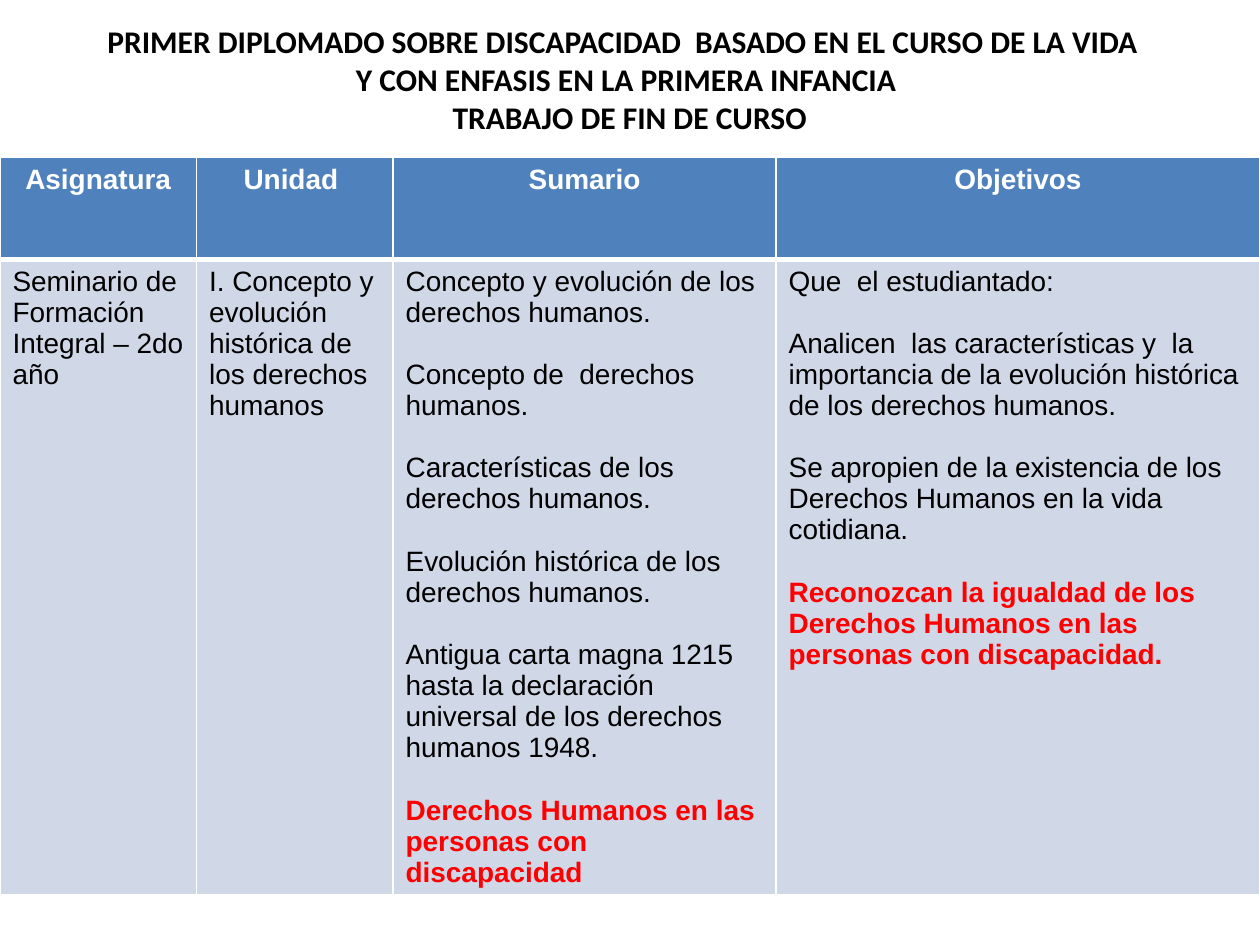
from lxml.etree import SubElement
from pptx import Presentation
from pptx.dml.color import RGBColor
from pptx.enum.text import MSO_ANCHOR, PP_ALIGN
from pptx.oxml.ns import qn
from pptx.util import Inches, Pt

WHITE = RGBColor(0xFF, 0xFF, 0xFF)
BLACK = RGBColor(0x00, 0x00, 0x00)
RED = RGBColor(0xFF, 0x00, 0x00)
HEADER_BLUE = RGBColor(0x4F, 0x81, 0xBD)
BODY_BLUE = RGBColor(0xD0, 0xD8, 0xE8)

TITLE = (
    "PRIMER DIPLOMADO SOBRE DISCAPACIDAD  BASADO EN EL CURSO DE LA VIDA \v"
    "Y CON ENFASIS EN LA PRIMERA INFANCIA\v"
    " TRABAJO DE FIN DE CURSO"
)
# Heading, width in inches, paragraphs, whether the last paragraph is highlighted
COLUMNS = [
    ("Asignatura", 1.56, ["Seminario de Formación Integral – 2do año"], False),
    ("Unidad ", 1.56,
     ["I. Concepto y evolución histórica de los derechos humanos"], False),
    ("Sumario", 3.04, [
        "Concepto y evolución de los derechos humanos.",
        "Concepto de  derechos humanos.",
        "Características de los derechos humanos.",
        "Evolución histórica de los derechos humanos.",
        "Antigua carta magna 1215 hasta la declaración universal de los "
        "derechos humanos 1948.",
        "Derechos Humanos en las personas con discapacidad",
    ], True),
    ("Objetivos", 3.84, [
        "Que  el estudiantado:",
        "Analicen  las características y  la importancia de la evolución "
        "histórica de los derechos humanos.",
        "Se apropien de la existencia de los Derechos Humanos en la vida "
        "cotidiana.",
        "Reconozcan la igualdad de los Derechos Humanos en las personas con "
        "discapacidad.",
    ], True),
]


def style_cell(cell, color, top, bottom):
    """Give the cell white borders (top and bottom widths in points) and a fill."""
    properties = cell._tc.get_or_add_tcPr()
    for side, width in (("L", 1), ("R", 1), ("T", top), ("B", bottom)):
        line = SubElement(properties, qn(f"a:ln{side}"), w=str(Pt(width)))
        fill = SubElement(line, qn("a:solidFill"))
        SubElement(fill, qn("a:srgbClr"), val=str(WHITE))
    cell.fill.solid()
    cell.fill.fore_color.rgb = color


def format_runs(paragraph, font_name, size, color, bold):
    for run in paragraph.runs:
        run.font.name = font_name
        run.font.size = Pt(size)
        run.font.color.rgb = color
        run.font.bold = bold


presentation = Presentation()
presentation.slide_width = Inches(10)
presentation.slide_height = Inches(7.5)
slide = presentation.slides.add_slide(presentation.slide_layouts[5])

title = slide.shapes.title
title.left, title.top = Inches(0.47), Inches(0)
title.width, title.height = Inches(9), Inches(1.25)
title.text_frame.text = TITLE
title.text_frame.vertical_anchor = MSO_ANCHOR.MIDDLE
title_paragraph = title.text_frame.paragraphs[0]
title_paragraph.alignment = PP_ALIGN.CENTER
format_runs(title_paragraph, "Calibri", 18, BLACK, True)

table = slide.shapes.add_table(
    2, len(COLUMNS), Inches(0), Inches(1.25), Inches(10), Inches(5.84)
).table
table.rows[0].height = Inches(0.81)
table.rows[1].height = Inches(5.03)

for index, (heading, width, texts, highlight_last) in enumerate(COLUMNS):
    table.columns[index].width = Inches(width)

    header = table.cell(0, index)
    style_cell(header, HEADER_BLUE, top=1, bottom=3)
    header.text_frame.text = heading
    heading_paragraph = header.text_frame.paragraphs[0]
    heading_paragraph.alignment = PP_ALIGN.CENTER
    format_runs(heading_paragraph, "Arial", 16, WHITE, True)

    body = table.cell(1, index)
    style_cell(body, BODY_BLUE, top=3, bottom=1)
    body.text_frame.text = "\n".join(texts)
    paragraphs = body.text_frame.paragraphs
    for number, paragraph in enumerate(paragraphs, start=1):
        if number > 1:
            paragraph.space_before = Pt(17.8)
        highlighted = highlight_last and number == len(paragraphs)
        format_runs(paragraph, "Arial", 16, RED if highlighted else BLACK, highlighted)

presentation.save("out.pptx")
